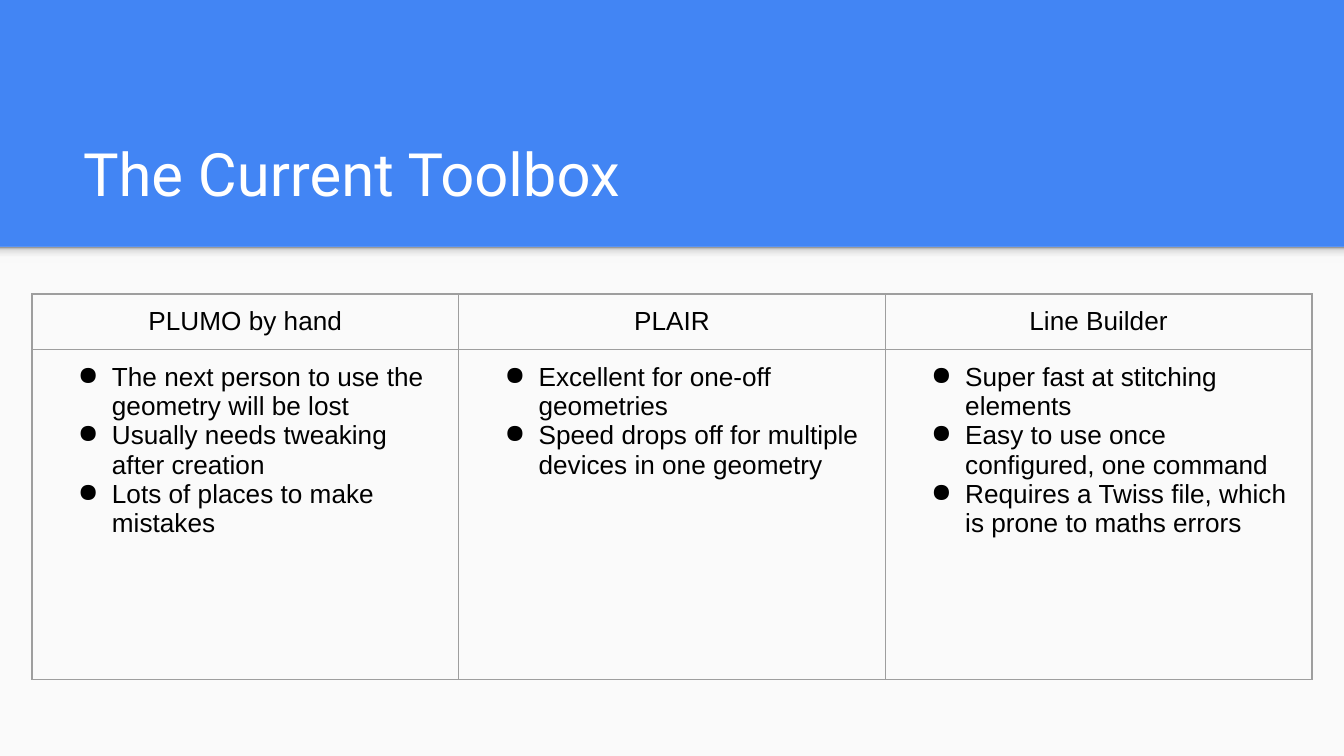
from copy import deepcopy

from lxml.etree import SubElement
from pptx import Presentation
from pptx.dml.color import RGBColor
from pptx.enum.shapes import MSO_SHAPE
from pptx.enum.text import MSO_ANCHOR, PP_ALIGN
from pptx.oxml import parse_xml
from pptx.oxml.ns import nsdecls, qn
from pptx.util import Pt

PX = 914400 / 134.4
COLORS = {
    "band": "4285F4",
    "panel": "FAFAFA",
    "title": "FFFFFF",
    "text": "000000",
    "border": "9E9E9E",
}
SHADOW_STOPS = [(0, "F9F9F9"), (36, "F9F9F9"), (80, "DEDEDE"), (100, "999999")]
TOOLS = {
    "PLUMO by hand": [
        "The next person to use the geometry will be lost",
        "Usually needs tweaking after creation",
        "Lots of places to make mistakes",
    ],
    "PLAIR": [
        "Excellent for one-off geometries",
        "Speed drops off for multiple devices in one geometry",
    ],
    "Line Builder": [
        "Super fast at stitching elements",
        "Easy to use once configured, one command",
        "Requires a Twiss file, which is prone to maths errors",
    ],
}


def px(length):
    return round(length * PX)


def color(name):
    return RGBColor.from_string(COLORS[name])


def set_all(target, values):
    for name, value in values.items():
        setattr(target, name, value)


def margins(side):
    return {f"margin_{edge}": px(side) for edge in ("left", "right", "top", "bottom")}


def write(para, text, font, size, color_name):
    span = para.add_run()
    span.text = text
    set_all(span.font, {"name": font, "size": Pt(size)})
    span.font.color.rgb = color(color_name)


def add_rectangle(page, box):
    shape = page.shapes.add_shape(MSO_SHAPE.RECTANGLE, *map(px, box))
    shape.shadow.inherit = False
    shape.line.fill.background()
    return shape


def add_panel(page, box, shadow_height):
    left, top, width, height = box
    panel = add_rectangle(page, box)
    panel.fill.solid()
    panel.fill.fore_color.rgb = color("panel")

    # Soft shadow under the blue band, darkest at the top
    shadow = add_rectangle(page, (left, top, width, shadow_height))
    shadow.fill.gradient()
    shadow.fill.gradient_angle = 90
    stops = shadow._element.spPr.find(qn("a:gradFill")).find(qn("a:gsLst"))
    for stop in list(stops):
        stops.remove(stop)
    for position, value in SHADOW_STOPS:
        stop = SubElement(stops, qn("a:gs"), pos=str(position * 1000))
        SubElement(stop, qn("a:srgbClr"), val=value)


def add_title(page, box, text):
    title = page.shapes.title
    set_all(title, dict(zip(("left", "top", "width", "height"), map(px, box))))
    frame = title.text_frame
    set_all(frame, {"vertical_anchor": MSO_ANCHOR.BOTTOM, "word_wrap": True, **margins(13)})
    para = frame.paragraphs[0]
    para.alignment = PP_ALIGN.LEFT
    write(para, text, "Roboto", 32, "title")


def add_bullet(para):
    properties = para._p.get_or_add_pPr()
    properties.set("marL", str(px(67)))
    properties.set("indent", str(px(-34)))
    SubElement(properties, qn("a:buChar"), char="●")


def format_cell(cell):
    set_all(cell, margins(13))
    cell.fill.background()
    line = parse_xml(
        f'<a:lnL {nsdecls("a")} w="{Pt(0.75)}"><a:solidFill>'
        f'<a:srgbClr val="{COLORS["border"]}"/></a:solidFill></a:lnL>'
    )
    for index, side in enumerate("LRTB"):
        border = deepcopy(line)
        border.tag = qn(f"a:ln{side}")
        cell._tc.tcPr.insert(index, border)


def add_tool_table(page, box, row_heights):
    table = page.shapes.add_table(2, len(TOOLS), *map(px, box)).table
    set_all(table, {"first_row": False, "horz_banding": False})
    for row, height in zip(table.rows, row_heights):
        row.height = px(height)

    for index, (tool, points) in enumerate(TOOLS.items()):
        table.columns[index].width = px(box[2] / len(TOOLS))
        heading, body = table.cell(0, index), table.cell(1, index)
        for cell in (heading, body):
            format_cell(cell)

        para = heading.text_frame.paragraphs[0]
        para.alignment = PP_ALIGN.CENTER
        write(para, tool, "Arial", 14, "text")

        frame = body.text_frame
        for number, point in enumerate(points):
            para = frame.add_paragraph() if number else frame.paragraphs[0]
            add_bullet(para)
            write(para, point, "Arial", 14, "text")


def main():
    deck = Presentation()
    set_all(deck, {"slide_width": px(1344), "slide_height": px(756)})
    page = deck.slides.add_slide(deck.slide_layouts[5])

    # Blue background, which shows as the title band
    page.background.fill.solid()
    page.background.fill.fore_color.rgb = color("band")

    add_panel(page, (0, 247, 1344, 509), 16)
    add_title(page, (70, 109, 1208, 113), "The Current Toolbox")
    add_tool_table(page, (32, 294, 1280, 372), (42, 330))
    deck.save("out.pptx")


if __name__ == "__main__":
    main()
